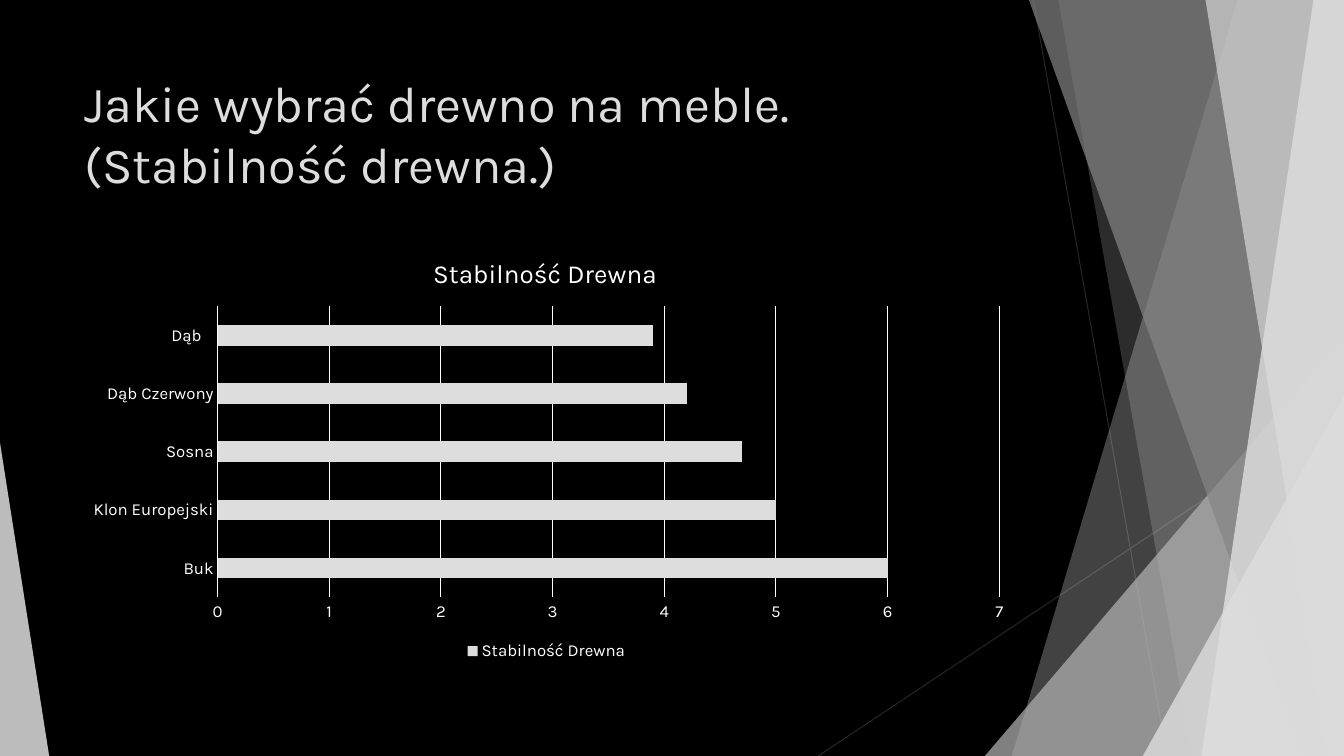
from dataclasses import dataclass

from lxml import etree
from pptx import Presentation
from pptx import util as u
from pptx.chart import data as chart_data
from pptx.dml.color import RGBColor
from pptx.enum import chart as chart_enum
from pptx.enum import shapes, text
from pptx.oxml.ns import qn

COLOURS = {
    "background": "000000",
    "text": "FFFFFF",
    "light": "DDDDDD",
    "silver": "B2B2B2",
    "grey": "858585",
    "pale": "EBEBEB",
    "hairline": "262626",
}
FONT = "Karla"
WIDTH, HEIGHT = 33.87, 19.05
LEFT, CONTENT_WIDTH = 1.88, 23.88


@dataclass
class Hairline:
    start: tuple[float, float]
    end: tuple[float, float]


@dataclass
class Band:
    top_x: float
    bottom_x: float
    colour: str
    opacity: int


@dataclass
class Corner:
    left: float
    top: float
    width: float
    apex: float
    colour: str
    opacity: int


DECORATION = [
    Hairline((26.04, 0), (29.41, HEIGHT)),
    Hairline((WIDTH, 10.24), (20.62, HEIGHT)),
    Band(31.19, 25.5, "light", 30),
    Band(26.67, 30.05, "light", 20),
    Corner(24.82, 8.46, 9.05, 1, "silver", 72),
    Band(25.93, 32.79, "grey", 70),
    Band(33.1, 30.28, "pale", 70),
    Band(30.38, 33.48, "light", 65),
    Corner(28.8, 9.98, 5.07, 1, "light", 80),
    Corner(0, 11.15, 1.24, 0, "light", 85),
]
STABILITY = {
    "Buk": 6,
    "Klon Europejski": 5,
    "Sosna": 4.7,
    "Dąb Czerwony": 4.2,
    "Dąb   ": 3.9,
}


def colour_of(name: str) -> RGBColor:
    return RGBColor.from_string(COLOURS[name])


def style_font(font, size: float, colour: str) -> None:
    font.name = FONT
    font.size = u.Pt(size)
    font.bold = False
    font.color.rgb = colour_of(colour)


def style_line(line, colour: str) -> None:
    line.color.rgb = colour_of(colour)
    line.width = u.Pt(0.75)


def draw_hairline(page, item: Hairline) -> None:
    ends = [u.Cm(value) for value in item.start + item.end]
    line = page.shapes.add_connector(shapes.MSO_CONNECTOR.STRAIGHT, *ends)
    style_line(line.line, "hairline")
    etree.SubElement(line._element.spPr, qn("a:effectLst"))


def paint(shape, item: Band | Corner) -> None:
    shape.shadow.inherit = False
    shape.line.fill.background()
    shape.fill.solid()
    shape.fill.fore_color.rgb = colour_of(item.colour)
    colour = shape._element.spPr.find(f"{qn('a:solidFill')}/{qn('a:srgbClr')}")
    etree.SubElement(colour, qn("a:alpha"), val=str(item.opacity * 1000))


def draw_band(page, item: Band) -> None:
    builder = page.shapes.build_freeform(u.Cm(item.top_x), 0)
    corners = [(WIDTH, 0), (WIDTH, HEIGHT), (item.bottom_x, HEIGHT)]
    builder.add_line_segments([(u.Cm(x), u.Cm(y)) for x, y in corners], close=True)
    paint(builder.convert_to_shape(), item)


def draw_corner(page, item: Corner) -> None:
    triangle = page.shapes.add_shape(
        shapes.MSO_SHAPE.ISOSCELES_TRIANGLE,
        u.Cm(item.left), u.Cm(item.top), u.Cm(item.width), u.Cm(HEIGHT - item.top),
    )
    triangle.adjustments[0] = item.apex
    paint(triangle, item)


def draw_title(page) -> None:
    box = page.shapes.add_textbox(u.Cm(LEFT), u.Cm(1.7), u.Cm(CONTENT_WIDTH), u.Cm(3.66))
    box.text_frame.word_wrap = True
    box.text_frame.vertical_anchor = text.MSO_ANCHOR.TOP
    para = box.text_frame.paragraphs[0]
    span = para.add_run()
    span.text = "Jakie wybrać drewno na meble. (Stabilność drewna.)"
    style_font(span.font, 36, "light")


def draw_chart(page) -> None:
    name = "Stabilność Drewna "
    data = chart_data.CategoryChartData()
    data.categories = list(STABILITY)
    data.add_series(name, list(STABILITY.values()))
    chart = page.shapes.add_chart(
        chart_enum.XL_CHART_TYPE.BAR_CLUSTERED,
        u.Cm(LEFT), u.Cm(5.99), u.Cm(CONTENT_WIDTH), u.Cm(10.77), data,
    ).chart
    style_font(chart.font, 10, "text")

    chart.has_title = True
    span = chart.chart_title.text_frame.paragraphs[0].add_run()
    span.text = name
    style_font(span.font, 18.6, "text")
    chart.chart_title.include_in_layout = False

    chart.has_legend = True
    chart.legend.position = chart_enum.XL_LEGEND_POSITION.BOTTOM
    chart.legend.include_in_layout = False
    style_font(chart.legend.font, 12, "text")

    for axis in (chart.category_axis, chart.value_axis):
        axis.major_tick_mark = chart_enum.XL_TICK_MARK.NONE
        axis.minor_tick_mark = chart_enum.XL_TICK_MARK.NONE
        style_font(axis.tick_labels.font, 12, "text")
    style_line(chart.category_axis.format.line, "text")
    chart.value_axis.format.line.fill.background()
    style_line(chart.value_axis.major_gridlines.format.line, "text")

    plot = chart.plots[0]
    plot.gap_width = 182
    plot.vary_by_categories = False
    bars = plot.series[0].format.fill
    bars.solid()
    bars.fore_color.rgb = colour_of("light")


def main() -> None:
    deck = Presentation()
    deck.slide_width, deck.slide_height = u.Cm(WIDTH), u.Cm(HEIGHT)
    page = deck.slides.add_slide(deck.slide_layouts[6])
    page.background.fill.solid()
    page.background.fill.fore_color.rgb = colour_of("background")
    painters = {Hairline: draw_hairline, Band: draw_band, Corner: draw_corner}
    for item in DECORATION:
        painters[type(item)](page, item)
    draw_title(page)
    draw_chart(page)
    deck.save("out.pptx")


if __name__ == "__main__":
    main()
